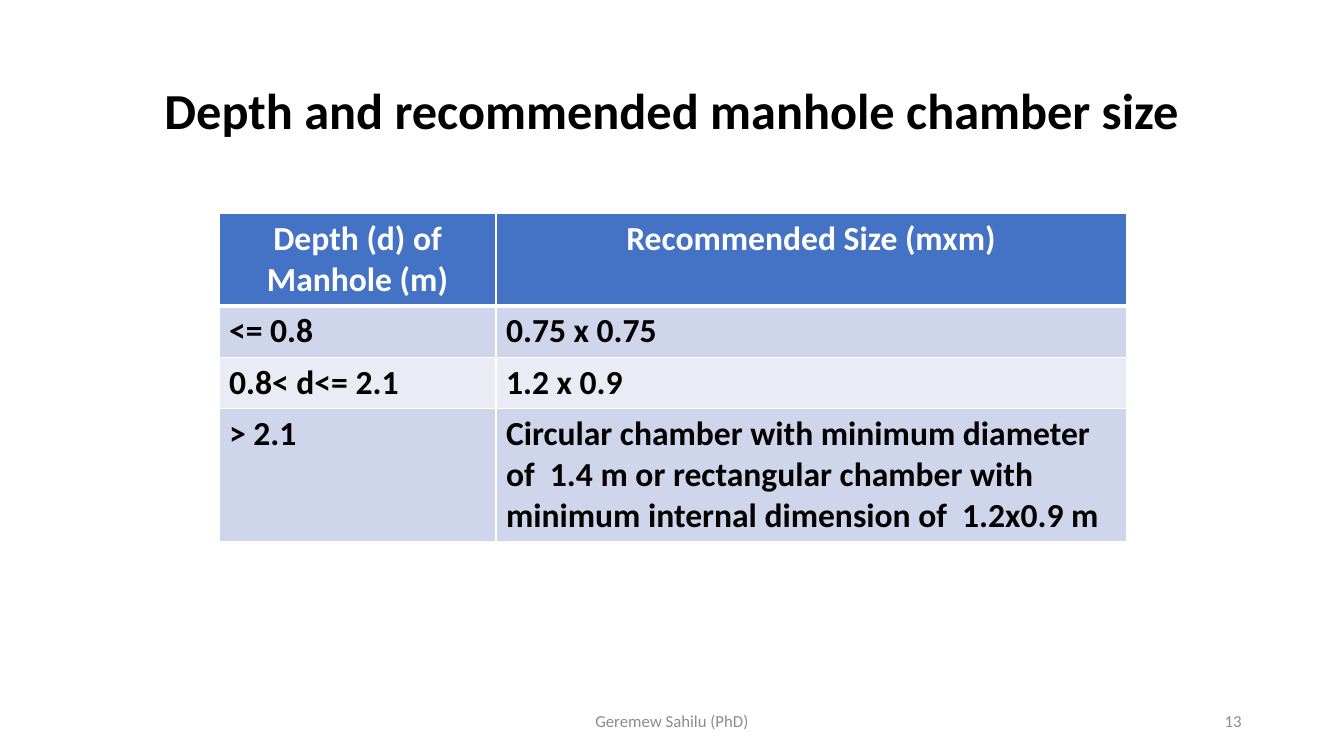
from lxml import etree
from pptx import Presentation
from pptx import util as u
from pptx.dml.color import RGBColor
from pptx.enum import text
from pptx.oxml.ns import qn

WHITE, BLACK, GREY = "FFFFFF", "000000", "8C8C8C"
HEADER_FILL = "4472C4"
BAND_FILLS = ("CFD5EA", "E9EBF5")

CHAMBER_SIZES = [
    ("Depth (d) of Manhole (m)", "Recommended Size (mxm)"),
    ("<= 0.8", "0.75 x 0.75"),
    ("0.8< d<= 2.1", "1.2 x 0.9"),
    ("> 2.1", "Circular chamber with minimum diameter of  1.4 m or rectangular "
              "chamber with minimum internal dimension of  1.2x0.9 m"),
]
COLUMN_WIDTHS = (6.98, 15.88)
ROW_HEIGHTS = (2.31, 1.29, 1.29, 3.35)


def rgb(hex_code):
    return RGBColor.from_string(hex_code)


class SlideBuilder:
    font = "Calibri"

    def __init__(self, prs):
        self.slide = prs.slides.add_slide(prs.slide_layouts[5])

    def add_wording(self, frame, wording, size, color, align, bold=False):
        paragraph = frame.paragraphs[0]
        paragraph.alignment = align
        run = paragraph.add_run()
        run.text = wording
        run.font.name = self.font
        run.font.size = u.Pt(size)
        run.font.bold = bold
        run.font.color.rgb = rgb(color)
        return paragraph

    def title(self, wording, left, top, width, height):
        heading = self.slide.shapes.title
        heading.left, heading.top = u.Cm(left), u.Cm(top)
        heading.width, heading.height = u.Cm(width), u.Cm(height)
        frame = heading.text_frame
        frame.word_wrap = True
        frame.vertical_anchor = text.MSO_ANCHOR.MIDDLE
        paragraph = self.add_wording(frame, wording, 36, BLACK, text.PP_ALIGN.CENTER, bold=True)
        paragraph.line_spacing = 0.9

    def footer(self, wording, left, width, align):
        box = self.slide.shapes.add_textbox(u.Cm(left), u.Cm(17.65), u.Cm(width), u.Cm(1.02))
        frame = box.text_frame
        frame.word_wrap = True
        frame.vertical_anchor = text.MSO_ANCHOR.MIDDLE
        self.add_wording(frame, wording, 12, GREY, align)

    def borders(self, cell, bottom):
        """Draw white cell borders, 1 pt except for the bottom one."""
        props = cell._tc.get_or_add_tcPr()
        for side, points in (("L", 1), ("R", 1), ("T", 1), ("B", bottom)):
            line = etree.SubElement(props, qn(f"a:ln{side}"), w=str(u.Pt(points)))
            fill = etree.SubElement(line, qn("a:solidFill"))
            etree.SubElement(fill, qn("a:srgbClr"), val=WHITE)

    def table(self, rows, left, top, widths, heights):
        grid = self.slide.shapes.add_table(
            len(rows), len(widths), u.Cm(left), u.Cm(top),
            u.Cm(sum(widths)), u.Cm(sum(heights))).table
        for column, width in zip(grid.columns, widths):
            column.width = u.Cm(width)
        for r, (wordings, height) in enumerate(zip(rows, heights)):
            grid.rows[r].height = u.Cm(height)
            header = r == 0
            fill = HEADER_FILL if header else BAND_FILLS[(r - 1) % 2]
            color = WHITE if header else BLACK
            align = text.PP_ALIGN.CENTER if header else text.PP_ALIGN.LEFT
            for c, wording in enumerate(wordings):
                cell = grid.cell(r, c)
                self.borders(cell, bottom=3 if header else 1)
                cell.fill.solid()
                cell.fill.fore_color.rgb = rgb(fill)
                self.add_wording(cell.text_frame, wording, 24, color, align, bold=True)


def main():
    prs = Presentation()
    prs.slide_width, prs.slide_height = u.Cm(33.87), u.Cm(19.05)
    builder = SlideBuilder(prs)
    builder.title("Depth and recommended manhole chamber size", 2.33, 1.01, 29.21, 3.68)
    builder.table(CHAMBER_SIZES, 5.52, 5.39, COLUMN_WIDTHS, ROW_HEIGHTS)
    builder.footer("Geremew Sahilu (PhD)", 11.22, 11.43, text.PP_ALIGN.CENTER)
    builder.footer("13", 23.92, 7.62, text.PP_ALIGN.RIGHT)
    prs.save("out.pptx")


if __name__ == "__main__":
    main()
